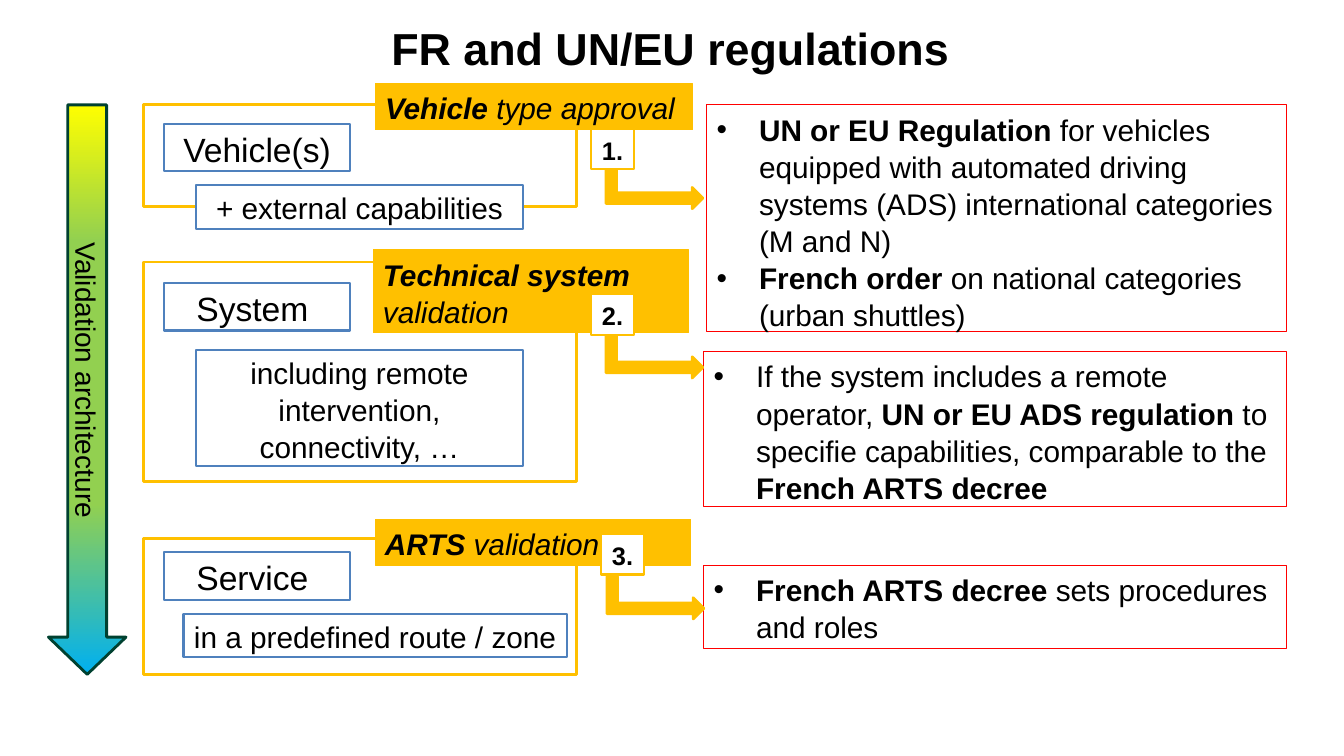
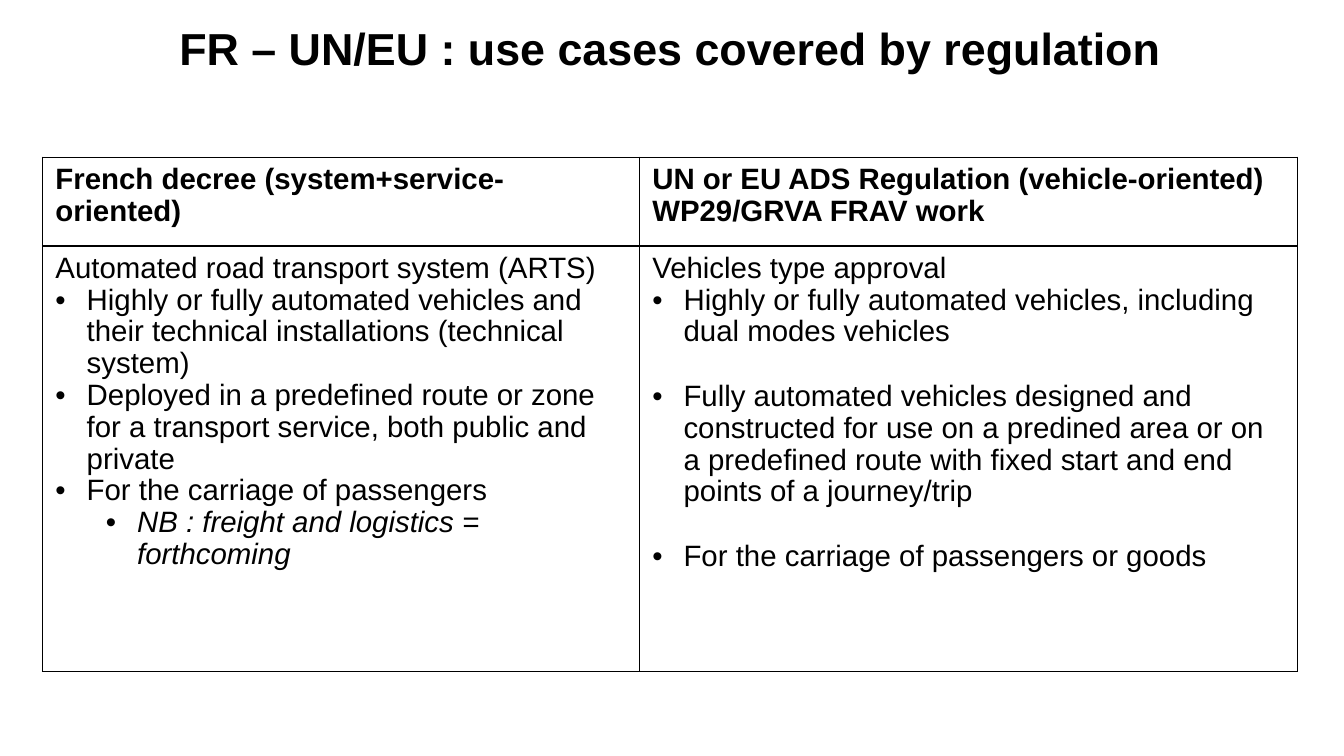
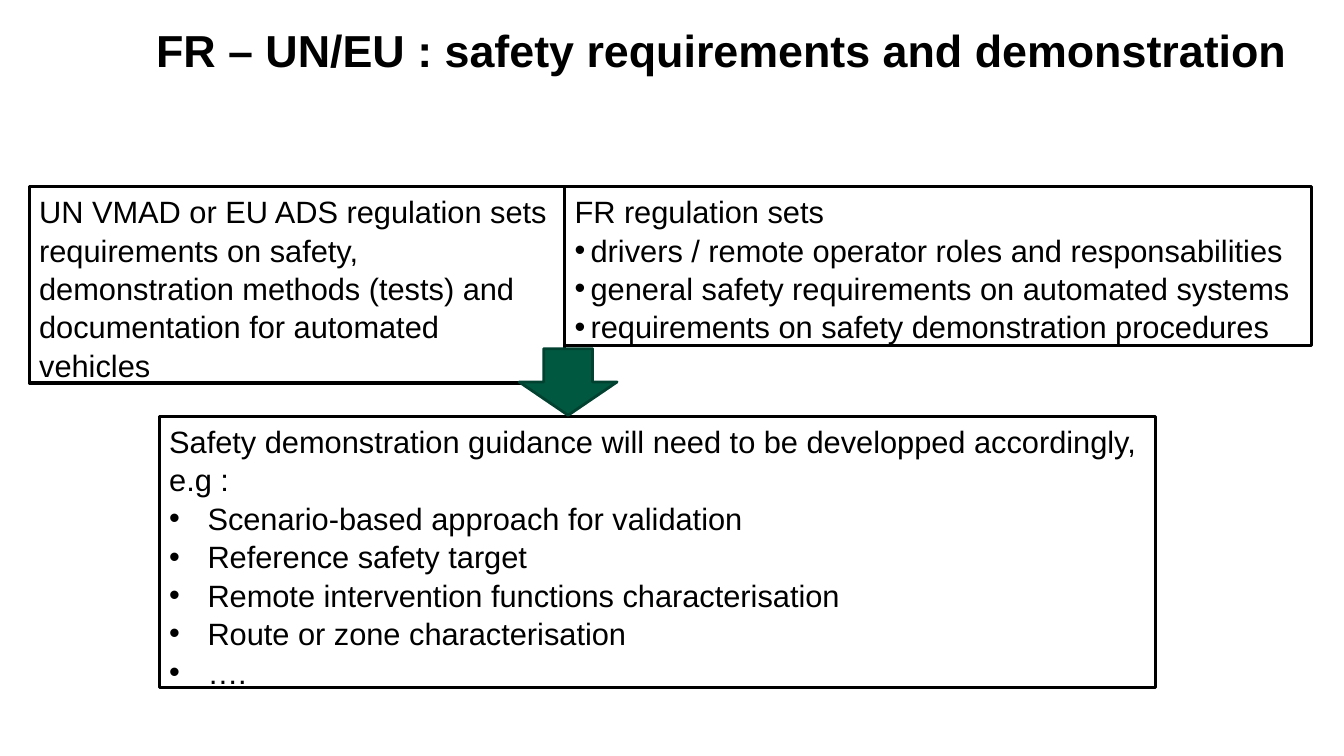
from lxml import etree
from pptx import Presentation
from pptx.dml.color import RGBColor
from pptx.enum.shapes import MSO_SHAPE
from pptx.enum.text import MSO_ANCHOR, PP_ALIGN
from pptx.oxml.ns import qn
from pptx.util import Inches, Pt

RECT = MSO_SHAPE.RECTANGLE
RIGHT_ARROW = MSO_SHAPE.RIGHT_ARROW
DOWN_ARROW = MSO_SHAPE.DOWN_ARROW
BENT_ARROW = MSO_SHAPE.BENT_UP_ARROW
TOP, MIDDLE = MSO_ANCHOR.TOP, MSO_ANCHOR.MIDDLE
LEFT, CENTER = PP_ALIGN.LEFT, PP_ALIGN.CENTER

FONT = "Arial"
BLACK, WHITE = "000000", "FFFFFF"
GOLD, BLUE, RED = "FFC000", "4F81BD", "FF0000"
GREEN, DARK_GREEN = "005841", "004130"
ARCHITECTURE_STOPS = [(0, "FFFF00"), (24, "92D050"), (70, "92D050"), (100, "00B0F0")]
BODY_SIZE = 21.3
BOX_INSETS = (0.1, 0.05)
LABEL_INSETS = (0.07, 0.03)
LOOSE, TIGHT = 1.04, 0.97


def color(hex_code):
    return RGBColor.from_string(hex_code)


def line(*runs, indent=0, left=None, before=0):
    runs = [(run, "") if isinstance(run, str) else run for run in runs]
    return {"runs": runs, "indent": indent, "before": before,
            "left": indent if left is None else left}


def write(frame, lines, size, align=LEFT, spacing=LOOSE):
    for number, content in enumerate(lines):
        paragraph = frame.add_paragraph() if number else frame.paragraphs[0]
        paragraph.alignment = align
        paragraph.line_spacing = spacing
        if content["before"]:
            paragraph.space_before = Pt(content["before"])
        if content["indent"]:
            properties = paragraph._p.get_or_add_pPr()
            properties.set("marL", str(Inches(content["left"])))
            properties.set("indent", str(-Inches(content["indent"])))
            etree.SubElement(properties, qn("a:buFont"), typeface=FONT)
            etree.SubElement(properties, qn("a:buChar"), char="•")
        for text, style in content["runs"]:
            run = paragraph.add_run()
            run.text = text
            run.font.name = FONT
            run.font.size = Pt(size)
            run.font.color.rgb = color(BLACK)
            run.font.bold = "b" in style
            run.font.italic = "i" in style


def set_insets(target, horizontal, vertical):
    target.margin_left = target.margin_right = Inches(horizontal)
    target.margin_top = target.margin_bottom = Inches(vertical)


def add_box(slide, box, outline, weight, fill=None, lines=(), size=BODY_SIZE,
            align=LEFT, insets=BOX_INSETS, anchor=TOP, kind=RECT):
    shape = slide.shapes.add_shape(kind, *map(Inches, box))
    shape.shadow.inherit = False
    shape.line.color.rgb = color(outline)
    shape.line.width = Pt(weight)
    if fill:
        shape.fill.solid()
        shape.fill.fore_color.rgb = color(fill)
    else:
        shape.fill.background()
    frame = shape.text_frame
    frame.word_wrap = True
    frame.vertical_anchor = anchor
    set_insets(frame, *insets)
    write(frame, lines, size, align)
    return shape


def add_titled_slide(deck, title, left=0.29, top=0.12):
    slide = deck.slides.add_slide(deck.slide_layouts[6])
    heading = slide.shapes.add_textbox(*map(Inches, (left, top, 12.72, 0.71)))
    frame = heading.text_frame
    frame.word_wrap = True
    frame.vertical_anchor = MIDDLE
    set_insets(frame, 0, 0)
    write(frame, [line((title, "b"))], 32, CENTER, 1.0)
    return slide


def add_architecture_arrow(slide, box):
    arrow = add_box(slide, box, DARK_GREEN, 2, GREEN, [line("Validation architecture")],
                    20, CENTER, anchor=MIDDLE, kind=RIGHT_ARROW)
    arrow.rotation = 90
    arrow.adjustments[1] = 0.48
    arrow.fill.gradient()
    arrow.fill.gradient_angle = 0
    stops = next(arrow._element.iter(qn("a:gsLst")))
    for stop in list(stops):
        stops.remove(stop)
    for position, hex_code in ARCHITECTURE_STOPS:
        stop = etree.SubElement(stops, qn("a:gs"), pos=str(position * 1000))
        etree.SubElement(stop, qn("a:srgbClr"), val=hex_code)


def add_stage(slide, box, stage):
    x, y, _, _ = box

    def inside(offset):
        dx, dy, width, height = offset
        return x + dx, y + dy, width, height

    add_box(slide, box, GOLD, 2)
    add_box(slide, inside((0.21, stage["name_top"], 1.84, 0.47)), BLUE, 1.5,
            lines=[line(stage["name"])], size=24, align=CENTER, insets=LABEL_INSETS)
    add_box(slide, inside(stage["detail_box"]), BLUE, 1.5, WHITE,
            [line(stage["detail"])], align=CENTER, insets=LABEL_INSETS)
    add_box(slide, inside(stage["approval_box"]), GOLD, 0.75, GOLD,
            [line(*stage["approval"])])
    add_box(slide, inside(stage["rules_box"]), RED, 0.75, lines=stage["rules"])
    add_box(slide, inside((*stage["arrow"], 0.42, 0.96)), GOLD, 2, GOLD,
            kind=BENT_ARROW).rotation = 90
    add_box(slide, inside((*stage["badge"], 0.43, 0.4)), GOLD, 1.5, WHITE,
            [line((stage["number"], "b"))], 18.1, CENTER, (0.05, 0.05))


STAGES = [
    (1.04, 1.01, {
        "number": "1.", "name": "Vehicle(s)", "name_top": 0.19,
        "detail": "+ external capabilities", "detail_box": (0.52, 0.8, 3.25, 0.43),
        "approval": [("Vehicle", "bi"), (" type approval", "i")],
        "approval_box": (2.3, -0.21, 3.15, 0.46),
        "arrow": (4.86, 0.34), "badge": (4.44, 0.24),
        "rules_box": (5.59, 0, 5.75, 2.25),
        "rules": [
            line(("UN or EU Regulation ", "b"),
                 "for vehicles equipped with automated driving systems (ADS) "
                 "international categories (M and N)", indent=0.42),
            line(("French order ", "b"), "on national categories (urban shuttles)",
                 indent=0.42)]}),
    (2.6, 2.18, {
        "number": "2.", "name": "System ", "name_top": 0.21,
        "detail": "including remote intervention, connectivity, …",
        "detail_box": (0.52, 0.87, 3.25, 1.15),
        "approval": [("Technical system ", "bi"), ("validation", "i")],
        "approval_box": (2.28, -0.12, 3.13, 0.82),
        "arrow": (4.86, 0.46), "badge": (4.44, 0.32),
        "rules_box": (5.56, 0.89, 5.78, 1.54),
        "rules": [
            line("If the system includes a remote operator, ",
                 ("UN or EU ADS regulation ", "b"),
                 "to specifie capabilities, comparable to the ",
                 ("French ARTS decree", "b"), indent=0.42)]}),
    (5.34, 1.35, {
        "number": "3.", "name": "Service ", "name_top": 0.14,
        "detail": "in a predefined route / zone", "detail_box": (0.4, 0.75, 3.8, 0.43),
        "approval": [("ARTS", "bi"), (" validation", "i")],
        "approval_box": (2.3, -0.19, 3.13, 0.46),
        "arrow": (4.87, 0.11), "badge": (4.54, -0.04),
        "rules_box": (5.56, 0.27, 5.78, 0.82),
        "rules": [
            line(("French ARTS decree ", "b"), "sets procedures and roles",
                 indent=0.42)]}),
]

USE_CASES = [
    [[line(("French decree (system+service-oriented)", "b"))],
     [line(("UN or EU ADS Regulation (vehicle-oriented)", "b")),
      line(("WP29/GRVA FRAV work", "b"))]],
    [[line("Automated road transport system (ARTS)"),
      line("Highly or fully automated vehicles and their technical installations "
           "(technical system)", indent=0.31),
      line("Deployed in a predefined route or zone for a transport service, both "
           "public and private", indent=0.31),
      line("For the carriage of passengers", indent=0.31),
      line(("NB : freight and logistics = forthcoming", "i"), indent=0.31, left=0.81)],
     [line("Vehicles type approval"),
      line("Highly or fully automated vehicles, including dual modes vehicles",
           indent=0.31),
      line("Fully automated vehicles designed and constructed for use on a predined "
           "area or on a predefined route with fixed start and end points of a "
           "journey/trip", indent=0.31, before=23.4),
      line("For the carriage of passengers or goods", indent=0.31, before=23.4)]],
]

FR_RULES = [line("FR regulation sets")] + [line(text, indent=0.16) for text in (
    "drivers / remote operator roles and responsabilities",
    "general safety requirements on automated systems",
    "requirements on safety demonstration procedures")]

GUIDANCE = [line("Safety demonstration guidance will need to be developped "
                 "accordingly, e.g :")] + [line(text, indent=0.38) for text in (
    "Scenario-based approach for validation",
    "Reference safety target",
    "Remote intervention functions characterisation",
    "Route or zone characterisation",
    "….")]


def border_cell(cell):
    properties = cell._tc.get_or_add_tcPr()
    for side in ("a:lnL", "a:lnR", "a:lnT", "a:lnB"):
        border = etree.SubElement(properties, qn(side), w=str(Pt(1)))
        fill = etree.SubElement(border, qn("a:solidFill"))
        etree.SubElement(fill, qn("a:srgbClr"), val=BLACK)


def add_use_case_table(slide, box, widths, heights):
    table = slide.shapes.add_table(len(heights), len(widths), *map(Inches, box)).table
    table.first_row = table.horz_banding = False
    for column, width in zip(table.columns, widths):
        column.width = Inches(width)
    for row, height, contents in zip(table.rows, heights, USE_CASES):
        row.height = Inches(height)
        for cell, lines in zip(row.cells, contents):
            set_insets(cell, 0.13, 0.07)
            border_cell(cell)
            cell.fill.background()
            write(cell.text_frame, lines, 21, spacing=TIGHT)


def add_safety_flow(slide, box):
    x, y, width, _ = box
    un_width = 5.31
    add_box(slide, (x, y, un_width, 1.95), BLACK, 2.25, size=22, lines=[
        line("UN VMAD or EU ADS regulation sets requirements on safety, demonstration "
             "methods (tests) and documentation for automated vehicles")])
    add_box(slide, (x + un_width, y, width - un_width, 1.58), BLACK, 2.25,
            lines=FR_RULES, size=22)
    add_box(slide, (x + 1.29, y + 2.28, 9.88, 2.69), BLACK, 2.25,
            lines=GUIDANCE, size=22)
    add_box(slide, (x + 4.86, y + 1.61, 0.97, 0.66), DARK_GREEN, 2, GREEN,
            kind=DOWN_ARROW)


def main():
    deck = Presentation()
    deck.slide_width, deck.slide_height = Inches(13.33), Inches(7.5)

    regulations = add_titled_slide(deck, "FR and UN/EU regulations")
    add_architecture_arrow(regulations, (-1.96, 3.48, 5.65, 0.77))
    for top, height, stage in STAGES:
        add_stage(regulations, (1.42, top, 4.3, height), stage)

    use_cases = add_titled_slide(deck, "FR – UN/EU : use cases covered by regulation")
    add_use_case_table(use_cases, (0.42, 1.56, 12.45, 5.1), (5.92, 6.53), (0.88, 4.22))

    safety = add_titled_slide(
        deck, "FR – UN/EU : safety requirements and demonstration", 0.8, 0.14)
    add_safety_flow(safety, (0.29, 1.85, 12.72, 4.97))

    deck.save("out.pptx")


if __name__ == "__main__":
    main()
